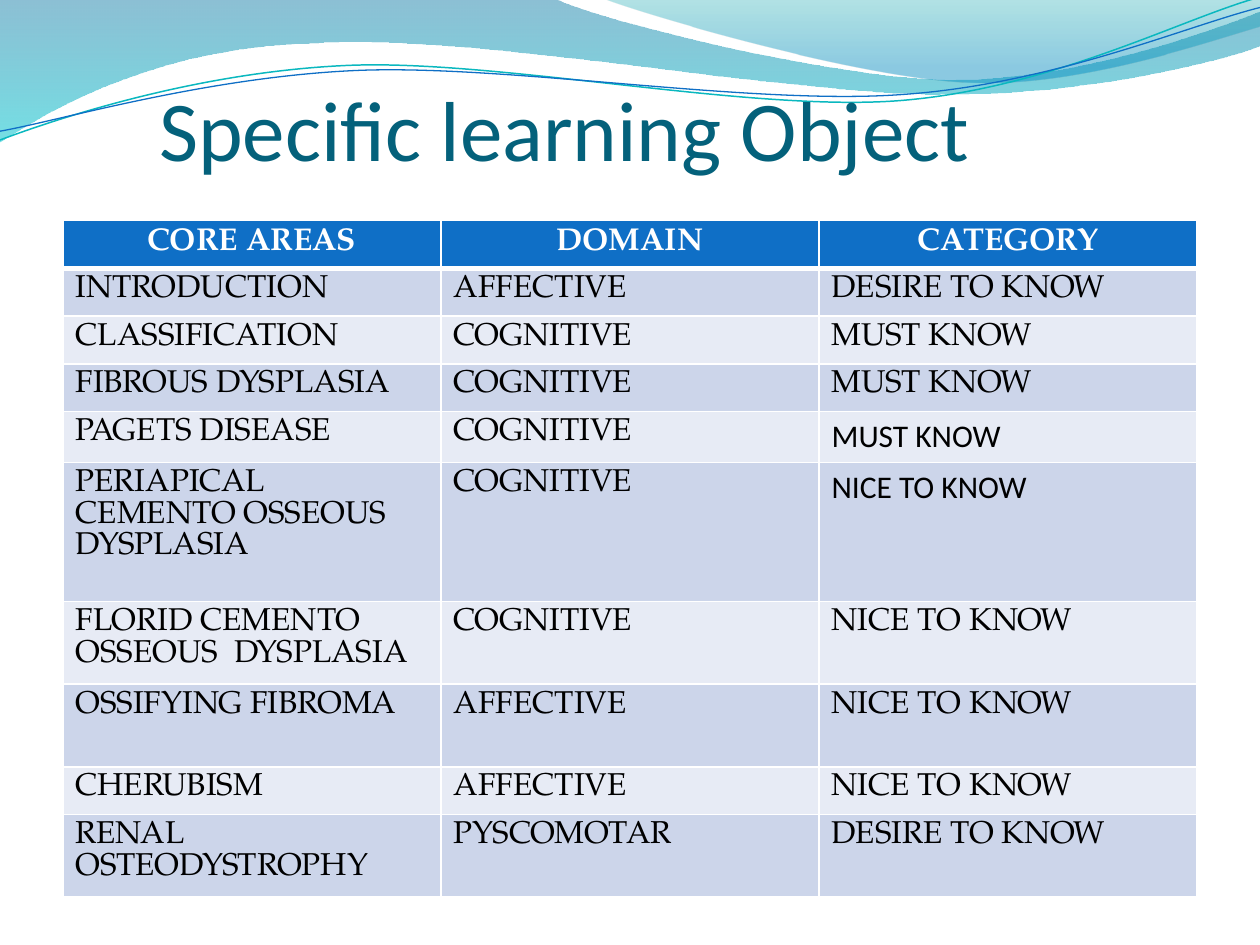
from lxml.etree import SubElement
from pptx import Presentation
from pptx.dml.color import RGBColor
from pptx.enum.text import MSO_ANCHOR, PP_ALIGN
from pptx.oxml.ns import qn
from pptx.util import Pt

WHITE = RGBColor(0xFF, 0xFF, 0xFF)
BLACK = RGBColor(0x00, 0x00, 0x00)
BLUE = RGBColor(0x0F, 0x6F, 0xC6)
AQUA = RGBColor(0x0A, 0xB8, 0xBF)
TITLE_TEAL = RGBColor(0x04, 0x61, 0x7B)
DEEP_TEAL = RGBColor(0x00, 0x74, 0xA1)
TURQUOISE = RGBColor(0x00, 0xC6, 0xCF)
SEA_GREEN = RGBColor(0x00, 0xA1, 0xA9)
SKY = RGBColor(0x00, 0x8B, 0xBF)
BAND_DARK = RGBColor(0xCC, 0xD5, 0xEA)
BAND_LIGHT = RGBColor(0xE7, 0xEB, 0xF5)
SERIF = "TeX Gyre Pagella"
SANS = "Calibri"

presentation = Presentation()
presentation.slide_width = Pt(720)
presentation.slide_height = Pt(540)
slide = presentation.slides.add_slide(presentation.slide_layouts[6])


def add_wave(start, segments, closed):
    """Draw segments of one point (a line) or three (a cubic curve), in points."""
    builder = slide.shapes.build_freeform(Pt(start[0]), Pt(start[1]))
    ends = [segment[-1] for segment in segments]
    builder.add_line_segments([(Pt(x), Pt(y)) for x, y in ends], close=closed)
    shape = builder.convert_to_shape()
    shape.shadow.inherit = False
    lines = list(shape._element.spPr.iter(qn("a:lnTo")))
    for line, segment in zip(lines, segments):
        if len(segment) == 3:
            curve = line.makeelement(qn("a:cubicBezTo"))
            for x, y in segment:
                SubElement(curve, qn("a:pt"), x=str(Pt(x) - shape.left), y=str(Pt(y) - shape.top))
            line.getparent().replace(line, curve)
    return shape


# Translucent bands: start, segments, gradient stops (position, colour, opacity in %)
bands = [
    ((0, 0),
     [[(317, -0.7)],
      [(343, 12), (478, 45.4), (546, 45.4)],
      [(614, 45.4), (690, 18.7), (720, 6.5)],
      [(720.7, 26)],
      [(708, 31.7), (626, 54.7), (537, 54)],
      [(448, 54), (275, 20), (185, 24.5)],
      [(93, 26), (33, 60), (-0.7, 81.4)],
      [(0, 0)]],
     [(0, DEEP_TEAL, 45), (1, TURQUOISE, 55)]),
    ((345, -0.7),
     [[(366.5, 8), (491, 44.6), (554, 46.8)],
      [(616, 49.7), (692, 23), (720, 15)],
      [(720, 0)],
      [(345, -0.7)]],
     [(0, SEA_GREEN, 30), (0.8, SKY, 45)]),
]
for start, segments, stops in bands:
    band = add_wave(start, segments, True)
    band.line.fill.background()
    band.fill.gradient()
    band.fill.gradient_angle = 270
    for gradient_stop, (position, color, opacity) in zip(band.fill.gradient_stops, stops):
        gradient_stop.position = position
        gradient_stop.color.rgb = color
    for color_element, stop in zip(band._element.spPr.iter(qn("a:srgbClr")), stops):
        SubElement(color_element, qn("a:alpha"), val=str(stop[2] * 1000))

# Thin lines: start, segments, colour, width
strokes = [
    ((0, 80),
     [[(34.6, 67), (114, 41), (199, 37.4)],
      [(284, 33.8), (427, 64), (513, 57.6)],
      [(600, 51), (675, 10.8), (719, -1.4)]],
     AQUA, 0.85),
    ((0, 75),
     [[(34, 69), (118, 44), (204, 40.3)],
      [(290, 36.7), (430, 60.5), (516, 54)],
      [(602, 48), (677.5, 15), (720, 4.3)]],
     BLUE, 0.75),
]
for start, segments, color, width in strokes:
    stroke = add_wave(start, segments, False)
    stroke.fill.background()
    stroke.line.color.rgb = color
    stroke.line.width = Pt(width)

title = slide.shapes.add_textbox(Pt(36), Pt(36), Pt(648), Pt(66))
title_frame = title.text_frame
title_frame.word_wrap = True
title_frame.vertical_anchor = MSO_ANCHOR.BOTTOM
title_frame.margin_left = Pt(55)
title_frame.margin_top = Pt(3.6)
title_frame.margin_right = title_frame.margin_bottom = 0
paragraph = title_frame.paragraphs[0]
paragraph.text = "Specific learning Object"
paragraph.font.name = SANS
paragraph.font.size = Pt(48.6)
paragraph.font.color.rgb = TITLE_TEAL

# Row height, then the three cell texts
rows = [
    (27.3, "CORE AREAS", "DOMAIN", "CATEGORY"),
    (27.3, "INTRODUCTION", "AFFECTIVE", "DESIRE TO KNOW"),
    (27.3, "CLASSIFICATION", "COGNITIVE", "MUST KNOW"),
    (27.3, "FIBROUS DYSPLASIA", "COGNITIVE", "MUST KNOW"),
    (29.2, "PAGETS DISEASE", "COGNITIVE", "MUST KNOW"),
    (79.4, "PERIAPICAL CEMENTO OSSEOUS DYSPLASIA", "COGNITIVE", "NICE TO KNOW"),
    (47.2, "FLORID CEMENTO OSSEOUS  DYSPLASIA", "COGNITIVE", "NICE TO KNOW"),
    (47.2, "OSSIFYING FIBROMA", "AFFECTIVE", "NICE TO KNOW"),
    (27.3, "CHERUBISM", "AFFECTIVE", "NICE TO KNOW"),
    (47.2, "RENAL OSTEODYSTROPHY", "PYSCOMOTAR", "DESIRE TO KNOW"),
]
sans_cells = {(4, 2), (5, 2)}
table = slide.shapes.add_table(len(rows), 3, Pt(36), Pt(126), Pt(648),
                               Pt(sum(row[0] for row in rows))).table
table.horz_banding = False
for column in table.columns:
    column.width = Pt(216)

for row_index, (height, *texts) in enumerate(rows):
    table.rows[row_index].height = Pt(height)
    is_header = row_index == 0
    for column_index, text in enumerate(texts):
        cell = table.cell(row_index, column_index)
        borders = {"a:lnL": 1, "a:lnR": 1,
                   "a:lnT": 3 if row_index == 1 else 1,
                   "a:lnB": 3 if is_header else 1}
        for tag, width in borders.items():
            border = SubElement(cell._tc.get_or_add_tcPr(), qn(tag), w=str(Pt(width)))
            border_fill = SubElement(border, qn("a:solidFill"))
            SubElement(border_fill, qn("a:srgbClr"), val=str(WHITE))
        cell.fill.solid()
        band_color = BAND_DARK if row_index % 2 else BAND_LIGHT
        cell.fill.fore_color.rgb = BLUE if is_header else band_color

        paragraph = cell.text_frame.paragraphs[0]
        paragraph.text = text
        paragraph.alignment = PP_ALIGN.CENTER if is_header else PP_ALIGN.LEFT
        paragraph.font.size = Pt(18)
        paragraph.font.bold = is_header
        paragraph.font.color.rgb = WHITE if is_header else BLACK
        if (row_index, column_index) in sans_cells:
            paragraph.font.name = SANS
        else:
            paragraph.font.name = SERIF
            paragraph.line_spacing = Pt(18)

presentation.save("out.pptx")
